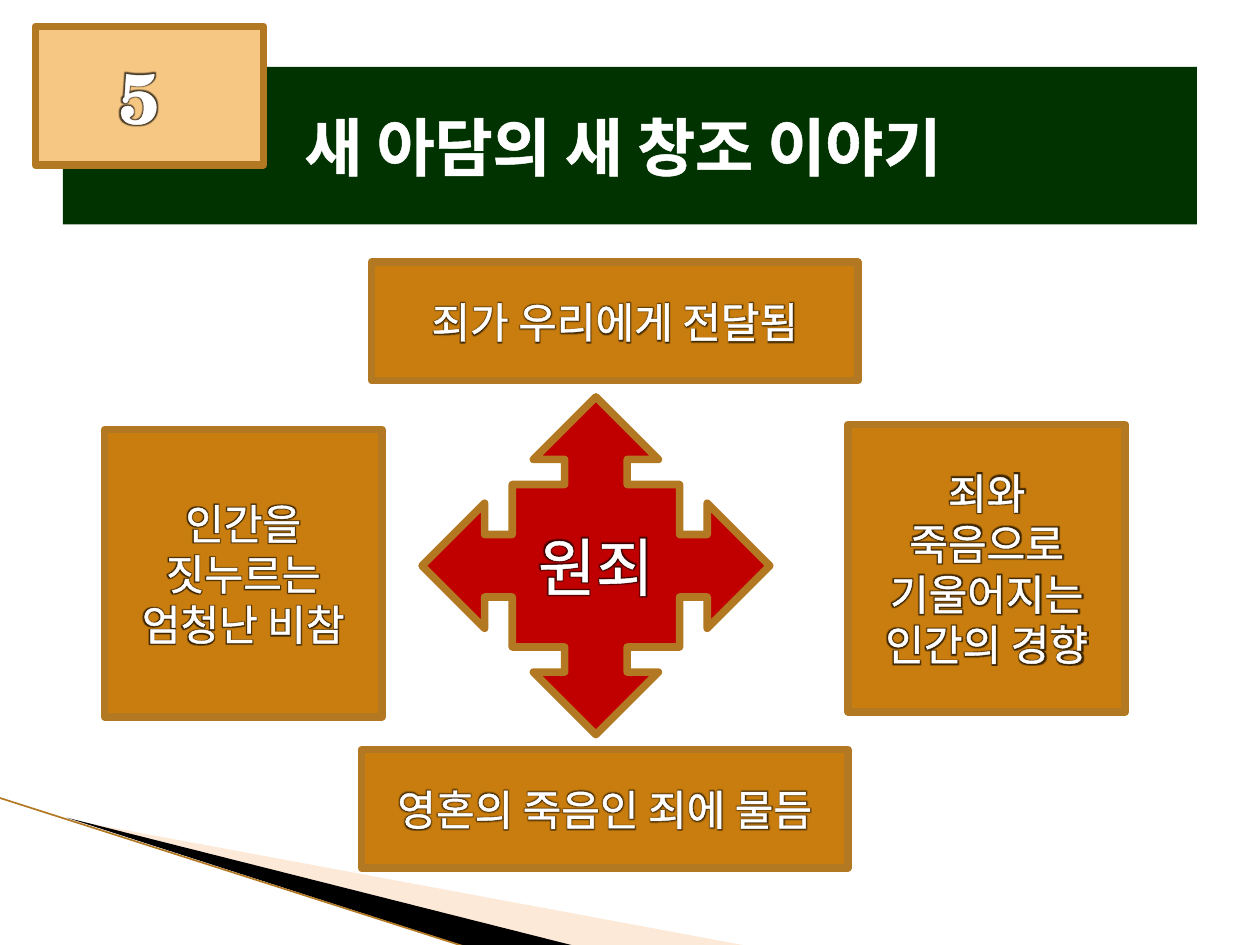
import pptx
import pptx.dml.color
import pptx.enum.shapes
import pptx.enum.text
import pptx.oxml
import pptx.oxml.ns
import pptx.util
from lxml import etree

Pt = pptx.util.Pt
SHAPES = pptx.enum.shapes.MSO_SHAPE
ALIGN = pptx.enum.text.PP_ALIGN
NS = pptx.oxml.ns.nsdecls("a")


def color(hex_code):
    return pptx.dml.color.RGBColor.from_string(hex_code)


class SlidePainter:
    """Holds the slide's style and draws each kind of element on it."""

    font_name = "TeX Gyre Schola"
    white, border, box_fill = "FFFFFF", "B27822", "C87D0E"
    border_width = 4.33

    def __init__(self, slide):
        self.slide = slide

    def wedge(self, points, fill, opacity=100):
        corners = [(Pt(x), Pt(y)) for x, y in points]
        builder = self.slide.shapes.build_freeform(*corners[0])
        builder.add_line_segments(corners[1:])
        wedge = builder.convert_to_shape()
        wedge.shadow.inherit = False
        wedge.fill.solid()
        wedge.fill.fore_color.rgb = color(fill)
        wedge.line.fill.background()
        if opacity < 100:
            tint = wedge.fill._xPr.find(".//" + pptx.oxml.ns.qn("a:srgbClr"))
            etree.SubElement(tint, pptx.oxml.ns.qn("a:alpha"), val=str(opacity * 1000))

    def line(self, start, end, stroke, width):
        edge = self.slide.shapes.add_connector(
            pptx.enum.shapes.MSO_CONNECTOR.STRAIGHT, *(Pt(v) for v in start + end))
        edge.line.color.rgb = color(stroke)
        edge.line.width = Pt(width)
        edge._element.spPr.append(pptx.oxml.parse_xml(f"<a:effectLst {NS}/>"))

    def block(self, bounds, lines, fill=box_fill, size=24, bold=False, kind=SHAPES.RECTANGLE,
              framed=True, align=ALIGN.CENTER, insets=(7.2, 7.2)):
        block = self.slide.shapes.add_shape(kind, *(Pt(v) for v in bounds))
        block.shadow.inherit = False
        block.fill.solid()
        block.fill.fore_color.rgb = color(fill)
        if framed:
            block.line.color.rgb = color(self.border)
            block.line.width = Pt(self.border_width)
            block.line._ln.append(pptx.oxml.parse_xml(f"<a:round {NS}/>"))
        else:
            block.line.fill.background()
        frame = block.text_frame
        layout = {"word_wrap": True, "vertical_anchor": pptx.enum.text.MSO_ANCHOR.MIDDLE,
                  "margin_left": Pt(insets[0]), "margin_right": Pt(insets[1])}
        for name, value in layout.items():
            setattr(frame, name, value)
        for index, text in enumerate(lines):
            paragraph = frame.add_paragraph() if index else frame.paragraphs[0]
            paragraph.alignment = align
            run = paragraph.add_run()
            run.text = text
            self.style(run, size, bold, glow=framed)

    def style(self, run, size, bold, glow):
        for name, value in {"name": self.font_name, "size": Pt(size), "bold": bold}.items():
            setattr(run.font, name, value)
        run.font.color.rgb = color(self.white)
        properties = run.font._element
        outline = Pt(1.45 if bold else 0.25)
        properties.insert(0, pptx.oxml.parse_xml(
            f'<a:ln {NS} w="{outline}"><a:solidFill><a:srgbClr val="{self.white}"/>'
            '</a:solidFill></a:ln>'))
        if glow:
            properties.insert(2, pptx.oxml.parse_xml(
                f'<a:effectLst {NS}><a:glow rad="{Pt(3)}"><a:srgbClr val="000000">'
                '<a:alpha val="70000"/></a:srgbClr></a:glow></a:effectLst>'))


def main():
    deck = pptx.Presentation()
    deck.slide_width, deck.slide_height = Pt(720), Pt(540)
    painter = SlidePainter(deck.slides.add_slide(deck.slide_layouts[6]))

    painter.wedge([(39.6, 468.4), (428.4, 540.7), (328.3, 540.7)], "FBC99E", 40)
    painter.wedge([(38.2, 467.3), (329, 540.7), (267.8, 541.4)], "000000")
    painter.line((-0.7, 455.8), (267.1, 541.4), painter.border, 0.95)

    painter.block((36, 38.2, 648, 90), ["새 아담의 새 창조 이야기"], "003300", 36, True,
                  framed=False, align=ALIGN.LEFT, insets=(138, 7.2))
    painter.block((241.2, 226.8, 198.7, 193), ["원죄"], "C00000", 36,
                  kind=SHAPES.QUAD_ARROW_CALLOUT)

    side_size, wide_size = (158.4, 164.2), (277.9, 67.7)
    effects = [
        ((59.8, 245.5) + side_size, ["인간을", "짓누르는", "엄청난 비참"]),
        ((484.6, 242.6) + side_size, ["죄와", "죽음으로", "기울어지는 인간의 경향"]),
        ((206.6, 428.4) + wide_size, ["영혼의 죽음인 죄에 물듬"]),
        ((212.4, 149.8) + wide_size, ["죄가 우리에게 전달됨"]),
    ]
    for bounds, lines in effects:
        painter.block(bounds, lines)

    painter.block((20.2, 15.1, 130.3, 79.2), ["5"], "F6C782", 40, True, insets=(7.2, 19))
    deck.save("out.pptx")


if __name__ == "__main__":
    main()
